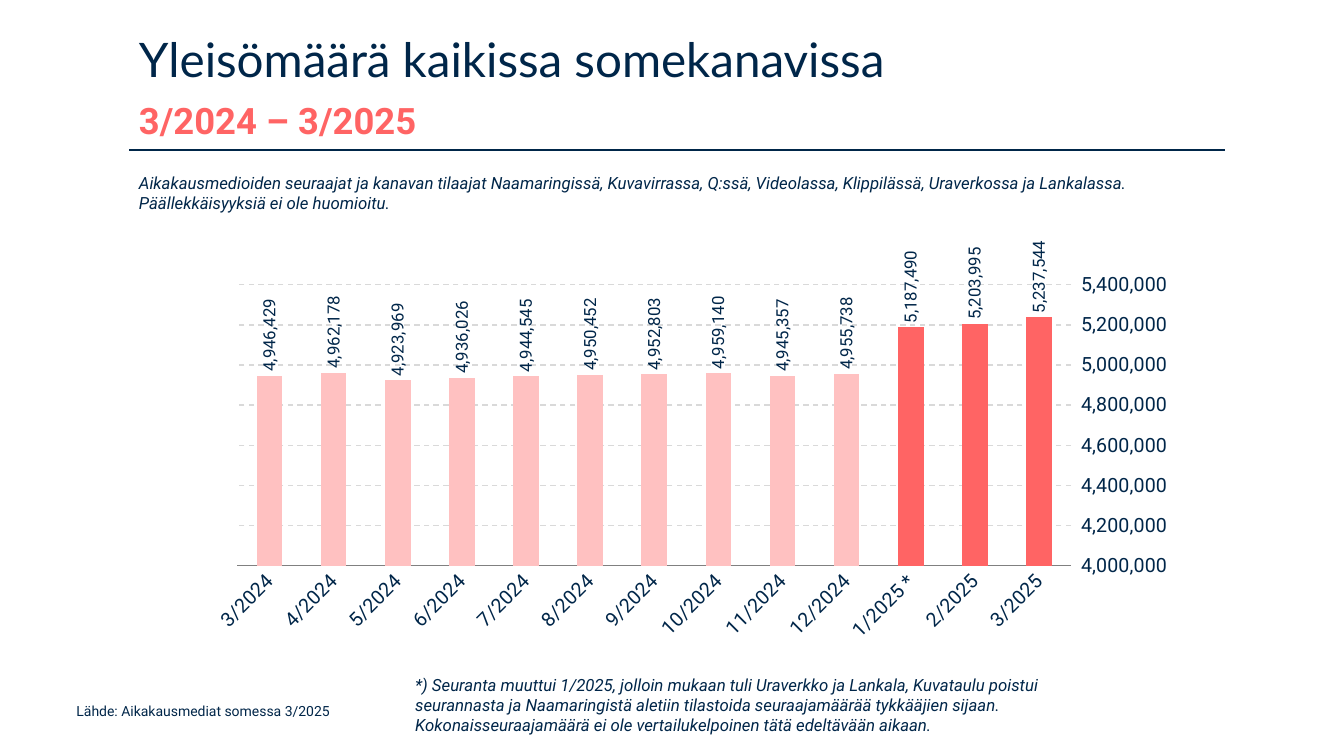
from lxml import etree
from pptx import Presentation, util as u
from pptx.chart.data import CategoryChartData
from pptx.dml.color import RGBColor
from pptx.enum import chart as ch, dml, shapes, text
from pptx.oxml import parse_xml
from pptx.oxml.ns import nsdecls, qn

NAVY = RGBColor(0x00, 0x26, 0x49)
CORAL = RGBColor(0xFF, 0x64, 0x64)
PINK = RGBColor(0xFF, 0xC1, 0xC1)
GRID = RGBColor(0xD9, 0xD9, 0xD9)
GREY = RGBColor(0x80, 0x80, 0x80)

deck = Presentation()
deck.slide_width, deck.slide_height = u.Inches(13.33), u.Inches(7.5)
slide = deck.slides.add_slide(deck.slide_layouts[6])
LEFT = 1.28


def style(font, size, color=NAVY, **more):
    look = {"name": "Roboto", "size": u.Pt(size), **more}
    for key, val in look.items():
        setattr(font, key, val)
    font.color.rgb = color


def add_text(area, runs, anchor=text.MSO_ANCHOR.TOP):
    frame = slide.shapes.add_textbox(*map(u.Inches, area)).text_frame
    frame.word_wrap = True
    frame.vertical_anchor = anchor
    para = frame.paragraphs[0]
    for i, (words, look) in enumerate(runs):
        if i:
            para.add_line_break()
        run = para.add_run()
        run.text = words
        style(run.font, **look)
    return para


# Rule under the title
rule = slide.shapes.add_connector(
    shapes.MSO_CONNECTOR.STRAIGHT, *map(u.Inches, (LEFT, 1.49, 12.15, 1.49)))
rule.line.color.rgb = NAVY
rule.line.width = u.Pt(1)
etree.SubElement(rule._element.spPr, qn("a:effectLst"))

# Chart data
months = [f"{m}/2024" for m in range(3, 13)] + ["1/2025 *", "2/2025", "3/2025"]
counts = [4946429, 4962178, 4923969, 4936026, 4944545, 4950452, 4952803,
          4959140, 4945357, 4955738, 5187490, 5203995, 5237544]
data = CategoryChartData(number_format="#,##0")
data.categories = months
data.add_series("Series 1", counts)
chart = slide.shapes.add_chart(
    ch.XL_CHART_TYPE.COLUMN_CLUSTERED,
    *map(u.Inches, (0.78, 2.11, 11.5, 4.61)), data).chart
chart.has_legend = chart.has_title = False
style(chart.font, 14)

# Columns: pale for 2024, strong for 2025
plot = chart.plots[0]
plot.gap_width = 150
plot.vary_by_categories = False
bars = plot.series[0]
bars.format.fill.solid()
bars.format.fill.fore_color.rgb = CORAL
for i, month in enumerate(months):
    if month.endswith("2024"):
        fill = bars.points[i].format.fill
        fill.solid()
        fill.fore_color.rgb = PINK

# Value labels
tags = bars.data_labels
for key, val in {"show_value": True, "number_format": "#,##0",
                 "number_format_is_linked": False,
                 "position": ch.XL_LABEL_POSITION.OUTSIDE_END}.items():
    setattr(tags, key, val)
style(tags.font, 12)

# Axes, with the value labels on the right
cats, vals = chart.category_axis, chart.value_axis
for axis in (cats, vals):
    axis.major_tick_mark = axis.minor_tick_mark = ch.XL_TICK_MARK.NONE
    style(axis.tick_labels.font, 14)
cats.format.line.color.rgb = GREY
cats.format.line.width = u.Pt(0.75)
for key, val in {"minimum_scale": 4000000, "maximum_scale": 5500000,
                 "major_unit": 200000, "has_major_gridlines": True,
                 "tick_label_position": ch.XL_TICK_LABEL_POSITION.HIGH}.items():
    setattr(vals, key, val)
vals.tick_labels.number_format = "#,##0"
vals.tick_labels.number_format_is_linked = False
vals.format.line.fill.background()
grid = vals.major_gridlines.format.line
grid.color.rgb = GRID
grid.width = u.Pt(1)
grid.dash_style = dml.MSO_LINE.DASH

# Turned labels and plot area
for owner, turn in (("c:dLbls", -90), ("c:catAx", -45)):
    for body in chart._chartSpace.xpath(f".//{owner}/c:txPr/a:bodyPr"):
        body.set("rot", str(turn * 60000))
        body.set("vert", "horz")
area = chart._chartSpace.xpath(".//c:plotArea")[0]
for old in area.findall(qn("c:layout")):
    area.remove(old)
marks = '<c:layoutTarget val="inner"/><c:xMode val="edge"/><c:yMode val="edge"/>'
marks += "".join(f'<c:{side} val="{share}"/>' for side, share in
                 zip("xywh", (0.137, 0.112, 0.719, 0.648)))
area.insert(0, parse_xml(f'<c:layout {nsdecls("c")}><c:manualLayout>{marks}'
                         '</c:manualLayout></c:layout>'))

# Title
title = add_text((LEFT, 0.25, 11.14, 1.22), [
    ("Yleisömäärä kaikissa somekanavissa", {"size": 34, "name": "Lato"}),
    ("3/2024 – 3/2025", {"size": 26, "color": CORAL, "bold": True}),
], text.MSO_ANCHOR.MIDDLE)
title.line_spacing = u.Pt(39.4)

# Intro, footnote and source
note = {"size": 12, "italic": True}
add_text((LEFT, 1.66, 11, 0.5), [(
    "Aikakausmedioiden seuraajat ja kanavan tilaajat Naamaringissä, "
    "Kuvavirrassa, Q:ssä, Videolassa, Klippilässä, Uraverkossa ja Lankalassa. "
    "Päällekkäisyyksiä ei ole huomioitu.", note)])
add_text((4.02, 6.64, 7.1, 0.71), [(
    "*) Seuranta muuttui 1/2025, jolloin mukaan tuli Uraverkko ja Lankala, "
    "Kuvataulu poistui seurannasta ja Naamaringistä aletiin tilastoida "
    "seuraajamäärää tykkääjien sijaan. Kokonaisseuraajamäärä ei ole "
    "vertailukelpoinen tätä edeltävään aikaan.", note)])
add_text((0.66, 6.92, 6.58, 0.44),
         [("Lähde: Aikakausmediat somessa 3/2025", {"size": 10})])

deck.save("out.pptx")
